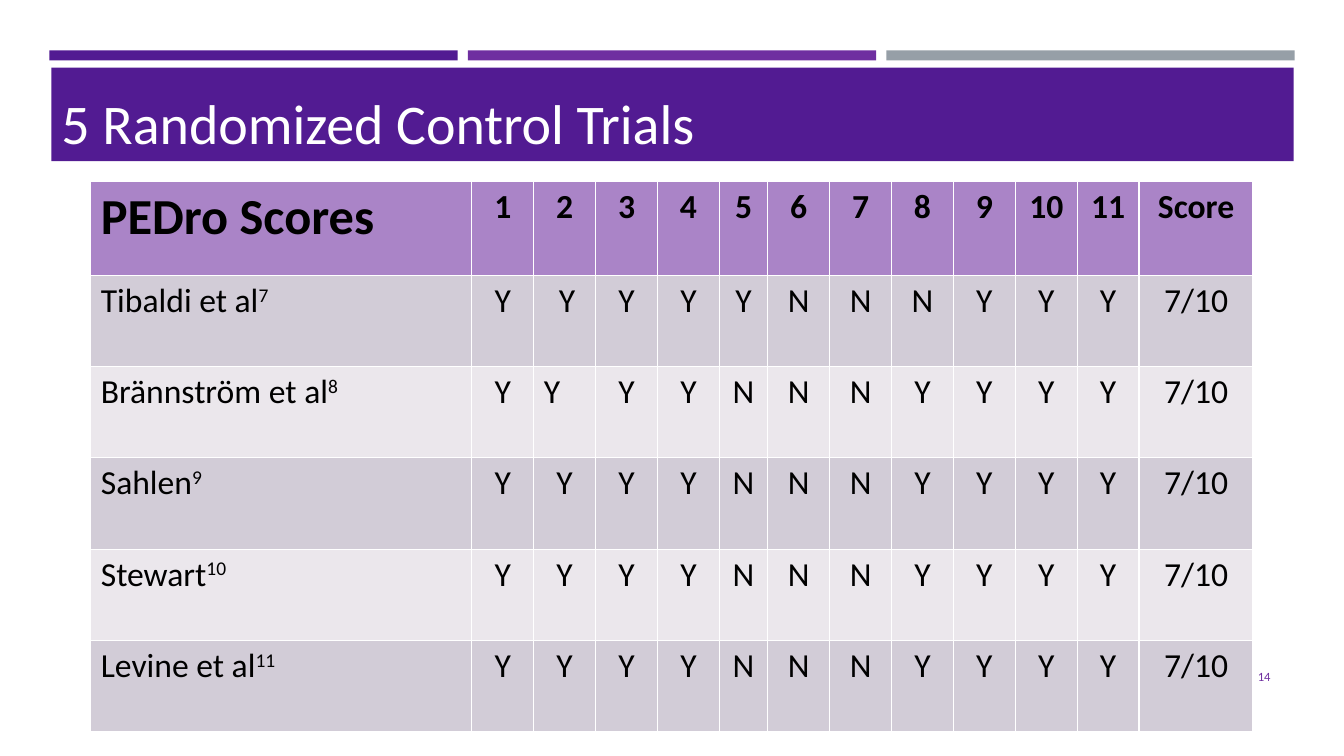
from lxml import etree
from pptx import Presentation
from pptx.dml.color import RGBColor
from pptx.enum.shapes import MSO_SHAPE
from pptx.enum.text import MSO_ANCHOR, MSO_AUTO_SIZE, PP_ALIGN
from pptx.oxml.ns import qn
from pptx.util import Inches, Pt

RECTANGLE = MSO_SHAPE.RECTANGLE
LEFT, CENTER, RIGHT = PP_ALIGN.LEFT, PP_ALIGN.CENTER, PP_ALIGN.RIGHT
BOTTOM, MIDDLE = MSO_ANCHOR.BOTTOM, MSO_ANCHOR.MIDDLE
NO_AUTOFIT = MSO_AUTO_SIZE.NONE

FONT = "Calibri"
COLORS = {
    "deep": "521B92", "purple": "6F2FA0", "gray": "969FA7",
    "dark_band": "D2CCD7", "light_band": "EBE7EC",
    "white": "FFFFFF", "black": "000000",
}


class TrialSlide:
    """Holds the slide and draws each kind of element in its style."""

    def __init__(self, prs):
        self.slide = prs.slides.add_slide(prs.slide_layouts[5])

    def paint(self, fill, color):
        fill.solid()
        fill.fore_color.rgb = RGBColor.from_string(COLORS[color])

    def add_text(self, paragraph, text, size, color="black", bold=False, raised=False):
        run = paragraph.add_run()
        run.text = text
        font = run.font
        font.name, font.size, font.bold = FONT, Pt(size), bold
        font.color.rgb = RGBColor.from_string(COLORS[color])
        if raised:
            font._element.set("baseline", "30000")

    def bar(self, left, top, width, height, color):
        bar = self.slide.shapes.add_shape(
            RECTANGLE, Inches(left), Inches(top), Inches(width), Inches(height))
        bar.shadow.inherit = False
        self.paint(bar.fill, color)
        bar.line.fill.background()

    def title(self, text, left, top, width, height):
        title = self.slide.shapes.title
        title.left, title.top = Inches(left), Inches(top)
        title.width, title.height = Inches(width), Inches(height)
        self.paint(title.fill, "deep")
        frame = title.text_frame
        frame.auto_size = NO_AUTOFIT
        frame.vertical_anchor = BOTTOM
        heading = frame.paragraphs[0]
        heading.alignment = LEFT
        heading.line_spacing = 0.9
        self.add_text(heading, text, 40, "white")

    def page_number(self, text, left, top, width, height):
        box = self.slide.shapes.add_textbox(
            Inches(left), Inches(top), Inches(width), Inches(height))
        frame = box.text_frame
        frame.word_wrap = True
        frame.vertical_anchor = MIDDLE
        number = frame.paragraphs[0]
        number.alignment = RIGHT
        self.add_text(number, text, 9, "purple")

    def table(self, left, top, col_widths, row_heights):
        table = self.slide.shapes.add_table(
            len(row_heights), len(col_widths), Inches(left), Inches(top),
            Inches(sum(col_widths)), Inches(sum(row_heights))).table
        table.first_row = table.horz_banding = False
        for column, width in zip(table.columns, col_widths):
            column.width = Inches(width)
        for row, height in zip(table.rows, row_heights):
            row.height = Inches(height)
        return table

    def cell(self, cell, text, color, align=CENTER, size=24, bold=False,
             note=None, alpha=None):
        paragraph = cell.text_frame.paragraphs[0]
        paragraph.alignment = align
        self.add_text(paragraph, text, size, bold=bold)
        if note:
            self.add_text(paragraph, note, size, raised=True)
        self.paint(cell.fill, color)
        tc_pr = cell._tc.get_or_add_tcPr()
        if alpha:
            tint = tc_pr.find(".//" + qn("a:srgbClr"))
            etree.SubElement(tint, qn("a:alpha"), val=str(alpha * 1000))
        # White hairlines go before the fill
        for position, side in enumerate(("lnL", "lnR", "lnT", "lnB")):
            line = etree.Element(qn(f"a:{side}"), w=str(Pt(1)))
            solid = etree.SubElement(line, qn("a:solidFill"))
            etree.SubElement(solid, qn("a:srgbClr"), val=COLORS["white"])
            tc_pr.insert(position, line)


def main():
    prs = Presentation()
    prs.slide_width, prs.slide_height = Inches(13.33), Inches(7.5)
    page = TrialSlide(prs)

    # Accent bars and title
    for index, color in enumerate(("deep", "purple", "gray")):
        page.bar(0.49 + 4.15 * index, 0.5, 4.05, 0.1, color)
    page.title("5 Randomized Control Trials", 0.51, 0.67, 12.32, 0.93)
    page.page_number("14", 11.55, 6.51, 1.15, 0.4)

    # PEDro table: the ten equal criteria share what the other columns leave
    trials = [
        ("Tibaldi et al", "7", "YYYYYNNNYYY"),
        ("Brännström et al", "8", "YYYYNNNYYYY"),
        ("Sahlen", "9", "YYYYNNNYYYY"),
        ("Stewart", "10", "YYYYNNNYYYY"),
        ("Levine et al", "11", "YYYYNNNYYYY"),
    ]
    name_width, fifth_width, score_width = 3.78, 0.48, 1.13
    criterion = (11.53 - name_width - fifth_width - score_width) / 10
    col_widths = ([name_width] + [criterion] * 4 + [fifth_width]
                  + [criterion] * 6 + [score_width])
    trial_height = (5.46 - 0.93) / len(trials)
    scores = page.table(0.9, 1.8, col_widths, [0.93] + [trial_height] * len(trials))

    # Header row
    page.cell(scores.cell(0, 0), "PEDro Scores", "purple", LEFT, 36, True, alpha=59)
    labels = [str(number) for number in range(1, 12)] + ["Score"]
    for col, label in enumerate(labels, 1):
        page.cell(scores.cell(0, col), label, "purple", bold=True, alpha=59)

    # Trial rows; two answers in the second criterion are left-aligned
    left_answers = {(1, 2), (2, 2)}
    for row, (trial, reference, answers) in enumerate(trials, 1):
        band = "dark_band" if row % 2 else "light_band"
        page.cell(scores.cell(row, 0), trial, band, LEFT, note=reference)
        for col, answer in enumerate([*answers, "7/10"], 1):
            align = LEFT if (row, col) in left_answers else CENTER
            page.cell(scores.cell(row, col), answer, band, align)
    scores.cell(1, 2).margin_left = Inches(0.25)

    prs.save("out.pptx")


if __name__ == "__main__":
    main()
